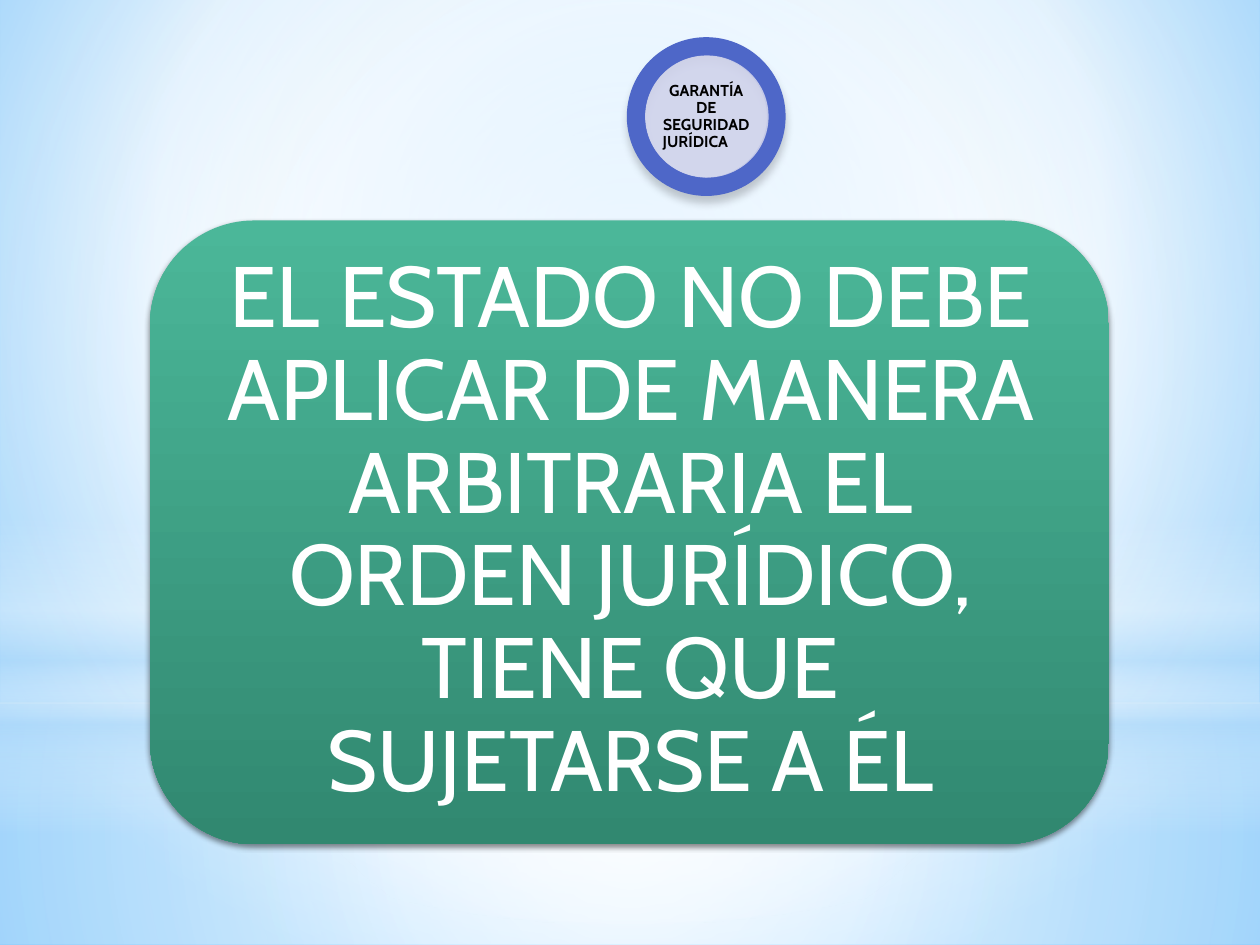
"""Builds a slide stating the guarantee of legal certainty."""
from lxml import etree
from pptx import Presentation
from pptx.dml.color import RGBColor
from pptx.enum.shapes import MSO_SHAPE
from pptx.enum.text import MSO_ANCHOR, MSO_AUTO_SIZE, PP_ALIGN
from pptx.oxml.ns import qn
from pptx.util import Inches, Pt

RECT, OVAL = MSO_SHAPE.RECTANGLE, MSO_SHAPE.OVAL
RING, ROUNDED = MSO_SHAPE.DONUT, MSO_SHAPE.ROUNDED_RECTANGLE
CENTER, MIDDLE = PP_ALIGN.CENTER, MSO_ANCHOR.MIDDLE
NO_FIT = MSO_AUTO_SIZE.NONE

WHITE = RGBColor(0xFF, 0xFF, 0xFF)
BLACK = RGBColor(0, 0, 0)
SKY = RGBColor(0x9E, 0xD5, 0xFF)
DEEP_SKY = RGBColor(0x5B, 0xB9, 0xFF)
MIST = RGBColor(0xB4, 0xDC, 0xFA)
INDIGO = RGBColor(0x4E, 0x67, 0xC8)
LAVENDER = RGBColor(0xD0, 0xD3, 0xEB)
MINT = RGBColor(0x4B, 0xB7, 0x99)
PINE = RGBColor(0x31, 0x88, 0x70)

COLUMNS, ROWS = 100, 75
MIDPOINT = (50, 50, 50, 50)


def add_color(parent, color, opacity=100):
    """Append a colour with its opacity in percent."""
    node = etree.SubElement(parent, qn("a:srgbClr"), val=str(color))
    if opacity < 100:
        etree.SubElement(node, qn("a:alpha"), val=str(opacity * 1000))


def paint_gradient(holder, stops, focus=None):
    """Swap a solid fill for a radial gradient, or a vertical one without focus."""
    gradient = etree.Element(qn("a:gradFill"), rotWithShape="1")
    stop_list = etree.SubElement(gradient, qn("a:gsLst"))
    for position, *color in stops:
        stop = etree.SubElement(stop_list, qn("a:gs"), pos=str(position * 1000))
        add_color(stop, *color)
    if focus:
        route = etree.SubElement(gradient, qn("a:path"), path="circle")
        sides = {side: str(share * 1000) for side, share in zip("ltrb", focus)}
        etree.SubElement(route, qn("a:fillToRect"), **sides)
    else:
        etree.SubElement(gradient, qn("a:lin"), ang="5400000", scaled="0")
    holder.replace(holder.find(qn("a:solidFill")), gradient)


class SlideBuilder:
    """Holds the font, the grid and the current slide."""

    def __init__(self, deck, font):
        """Add a title-only slide to the deck."""
        self.font = font
        self.cell_width = deck.slide_width / COLUMNS
        self.cell_height = deck.slide_height / ROWS
        self.slide = deck.slides.add_slide(deck.slide_layouts[5])

    def box(self, column, row, columns, rows):
        """Turn grid cells into left, top, width and height."""
        return (int(column * self.cell_width), int(row * self.cell_height),
                int(columns * self.cell_width), int(rows * self.cell_height))

    def background(self, stops, focus):
        """Fill the slide with a radial gradient."""
        self.slide.background.fill.solid()
        paint_gradient(self.slide.element.find(".//" + qn("p:bgPr")), stops, focus)

    def shape(self, kind, cells, color=WHITE, opacity=100):
        """Add a flat shape without outline."""
        shape = self.slide.shapes.add_shape(kind, *self.box(*cells))
        shape.shadow.inherit = False
        shape.line.fill.background()
        shape.fill.solid()
        shape.fill.fore_color.rgb = color
        if opacity < 100:
            swatch = shape.element.spPr.find(qn("a:solidFill"))[0]
            etree.SubElement(swatch, qn("a:alpha"), val=str(opacity * 1000))
        return shape

    def gradient_shape(self, kind, cells, stops, focus=None):
        """Add a shape with a gradient fill."""
        shape = self.shape(kind, cells)
        paint_gradient(shape.element.spPr, stops, focus)
        return shape

    def drop_shadow(self, shape, opacity, blur, distance):
        """Cast a black shadow straight down."""
        effects = shape.element.spPr.find(qn("a:effectLst"))
        shadow = etree.SubElement(
            effects, qn("a:outerShdw"), blurRad=str(Pt(blur)), dist=str(Pt(distance)),
            dir="5400000", algn="ctr", rotWithShape="0")
        add_color(shadow, BLACK, opacity)

    def set_words(self, holder, words, size, color, bold=False, inset=0):
        """Set one centred paragraph in a text holder."""
        frame = holder.text_frame
        frame.auto_size = NO_FIT
        frame.word_wrap = True
        frame.vertical_anchor = MIDDLE
        frame.margin_left = frame.margin_right = Inches(inset)
        frame.margin_top = frame.margin_bottom = Inches(inset)
        paragraph = frame.paragraphs[0]
        paragraph.alignment = CENTER
        paragraph.line_spacing = 0.9
        run = paragraph.add_run()
        run.text = words
        run.font.name = self.font
        run.font.size = Pt(size)
        run.font.bold = bold
        run.font.color.rgb = color

    def title(self, cells, words, size, color):
        """Place the title placeholder in front of the shapes drawn so far."""
        title = self.slide.shapes.title
        title.left, title.top, title.width, title.height = self.box(*cells)
        self.set_words(title, words, size, color, bold=True)
        self.slide.shapes.element.append(title.element)

    def text(self, cells, words, size, color, inset):
        """Add a text box."""
        holder = self.slide.shapes.add_textbox(*self.box(*cells))
        self.set_words(holder, words, size, color, inset=inset)


def draw_backdrop(builder):
    """Draw the sky with its horizon and glow."""
    builder.background([(0, SKY), (60, WHITE), (100, DEEP_SKY)], (20, 10, 20, 60))
    builder.gradient_shape(
        RECT, (0, 55.8, 100, 19.2),
        [(0, WHITE, 91), (37, WHITE, 76), (100, MIST, 79)], MIDPOINT)
    builder.gradient_shape(
        RECT, (0, 0, 100, 55.8),
        [(0, WHITE, 89), (48, WHITE, 62), (100, MIST, 79)], MIDPOINT)
    builder.gradient_shape(
        RECT, (0, 41.2, 100, 25),
        [(0, WHITE, 0), (29, WHITE, 30), (45, MIST, 40),
         (55, WHITE, 26), (65, MIST, 60), (100, WHITE, 0)])
    builder.gradient_shape(
        OVAL, (0, 17.5, 100, 55.8), [(0, WHITE), (56, WHITE, 0)], MIDPOINT)


def draw_badge(builder):
    """Draw the ring that names the guarantee."""
    ring = builder.shape(RING, (49.8, 3, 12.5, 12.5), INDIGO)
    ring.adjustments[0] = 0.11
    ring.line.color.rgb = INDIGO
    ring.line.width = Pt(0.75)
    builder.drop_shadow(ring, 20, 5, 4)
    builder.shape(OVAL, (51.2, 4.4, 9.8, 9.7), LAVENDER, 90)
    builder.title((52.6, 5.8, 6.9, 6.9), "GARANTÍA DE SEGURIDAD JURÍDICA\t", 9, BLACK)


def draw_statement(builder):
    """Draw the panel that explains the guarantee."""
    panel = builder.gradient_shape(
        ROUNDED, (11.9, 17.5, 76.1, 49.5), [(0, MINT), (100, PINE)])
    builder.drop_shadow(panel, 45, 3.1, 1.8)
    builder.text(
        (14.4, 19.9, 71.3, 44.6),
        "EL ESTADO NO DEBE APLICAR DE MANERA ARBITRARIA EL ORDEN JURÍDICO, "
        "TIENE QUE SUJETARSE A ÉL", 49, WHITE, 0.2)


def main():
    """Build and save the deck."""
    deck = Presentation()
    deck.slide_width, deck.slide_height = Inches(10), Inches(7.5)
    builder = SlideBuilder(deck, "Cabin")
    draw_backdrop(builder)
    draw_badge(builder)
    draw_statement(builder)
    deck.save("out.pptx")


if __name__ == "__main__":
    main()
